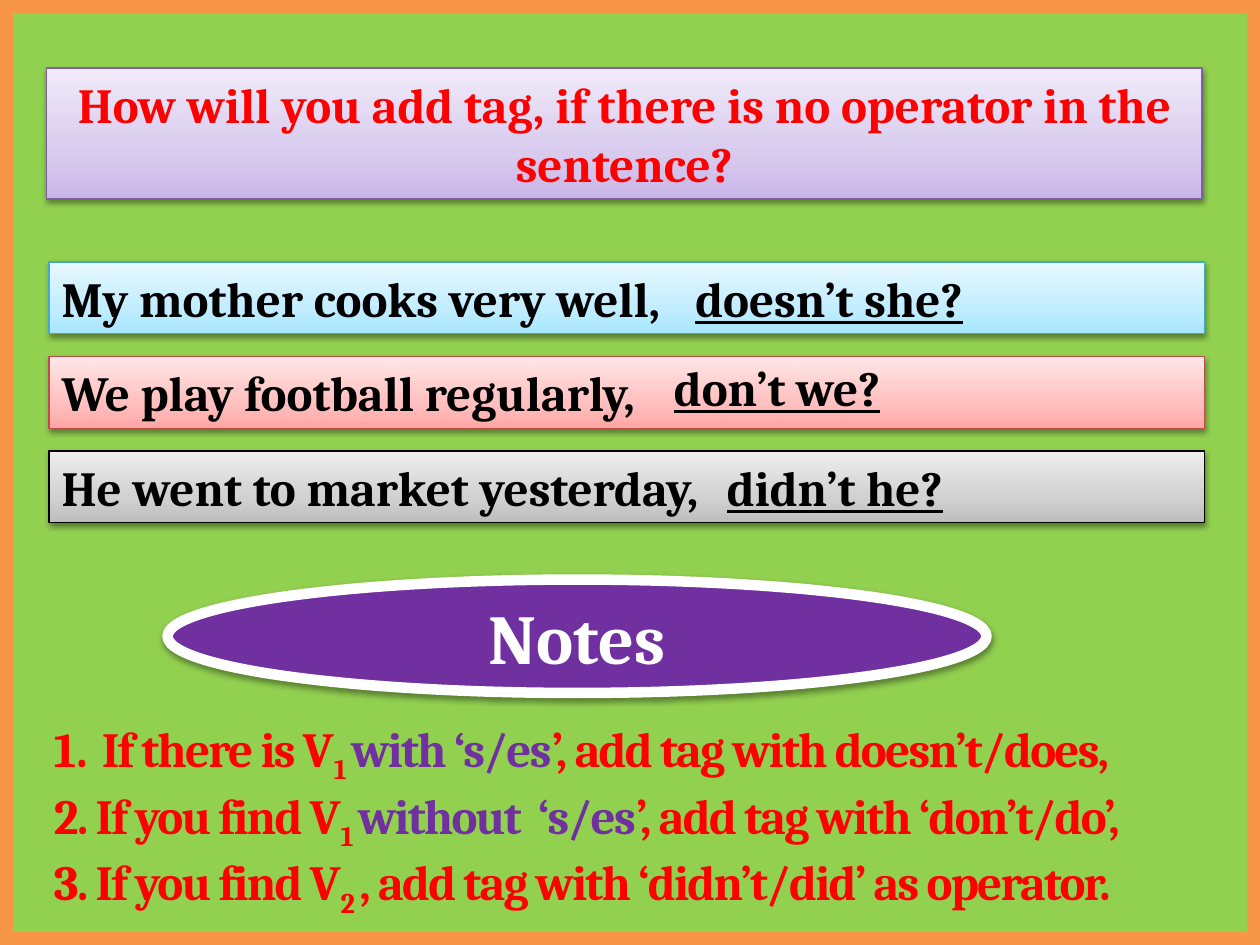
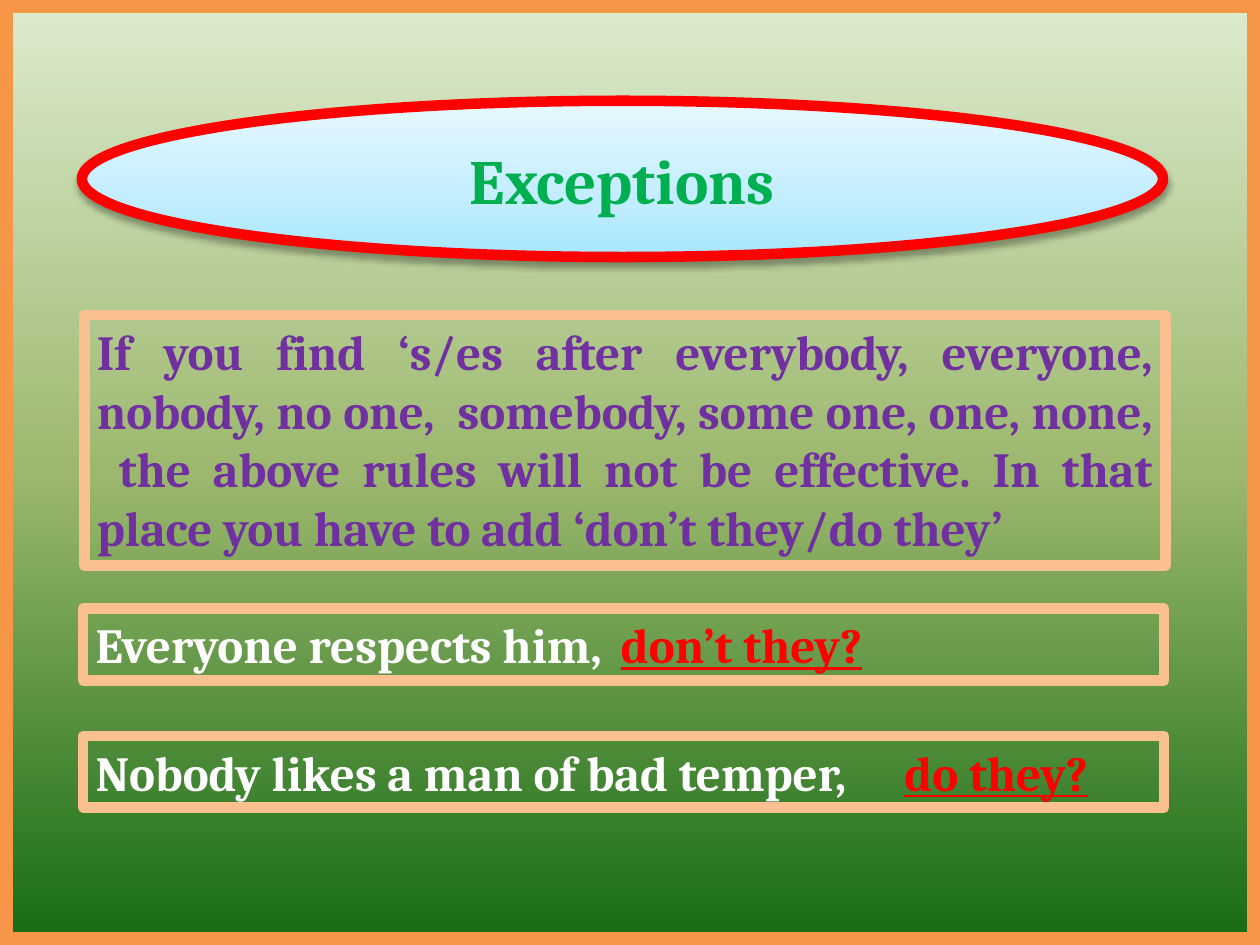
from lxml.etree import SubElement
from pptx import Presentation
from pptx.dml.color import RGBColor
from pptx.enum.shapes import MSO_SHAPE
from pptx.enum.text import MSO_ANCHOR, MSO_AUTO_SIZE, PP_ALIGN
from pptx.oxml.ns import qn
from pptx.util import Pt

PX = 9144  # 100 px to the inch
WIDTH, HEIGHT = 1000, 750
FONT = "Cambria"
BODY_SIZE = 28
rgb = RGBColor.from_string

ORANGE, PEACH = "F79646", "FAC090"
RED, PURPLE, GREEN = "FF0000", "7030A0", "00B050"
BLACK, WHITE = "000000", "FFFFFF"
LIME = "92D050"
LILAC_FADE = [(0, "C9B5E8"), (35, "D8CBEE"), (100, "F0EAF9")]
SKY_FADE = [(0, "A7E6FF"), (35, "C1EDFF"), (100, "E7F8FF")]
PINK_FADE = [(0, "FFA6A5"), (35, "FFC0BF"), (100, "FFE7E7")]
GREY_FADE = [(0, "BDBDBD"), (35, "D1D1D1"), (100, "EEEEEE")]
MEADOW_FADE = [(0, "DDEBCF"), (50, "9CB86E"), (100, "156B13")]
SOFT_SHADOW = (38, 3.1, 1.6)  # opacity %, blur pt, distance pt
DEEP_SHADOW = (32, 3.5, 2.2)


def paint_gradient(fill, element, stops, angle):
    """Give the first gradient found in element any number of colour stops."""
    fill.gradient()
    fill.gradient_angle = angle
    stop_list = element.xpath(".//a:gsLst")[0]
    for old_stop in list(stop_list):
        stop_list.remove(old_stop)
    for position, colour in stops:
        stop = SubElement(stop_list, qn("a:gs"), pos=str(position * 1000))
        SubElement(stop, qn("a:srgbClr"), val=colour)


def add_box(page, at, spans, kind=None, fill=None, line=None, shadow=None,
            size=BODY_SIZE, align=PP_ALIGN.LEFT, underline=False):
    """Add a shape, or a text box if kind is None; spans lists (text, colour) by paragraph."""
    place = [length * PX for length in at]
    if kind is None:
        box = page.shapes.add_textbox(*place)
    else:
        box = page.shapes.add_shape(kind, *place)
        box.shadow.inherit = False
        if fill is None:
            box.fill.background()
        elif isinstance(fill, list):
            paint_gradient(box.fill, box.element, fill, 90)
        else:
            box.fill.solid()
            box.fill.fore_color.rgb = rgb(fill)
        colour, width = line
        box.line.color.rgb = rgb(colour)
        box.line.width = Pt(width)
    if shadow:
        opacity, blur, distance = shadow
        effects = box.element.spPr.find(qn("a:effectLst"))
        outer = SubElement(effects, qn("a:outerShdw"), blurRad=str(Pt(blur)),
                           dist=str(Pt(distance)), dir="5400000", rotWithShape="0")
        tint = SubElement(outer, qn("a:srgbClr"), val=BLACK)
        SubElement(tint, qn("a:alpha"), val=str(opacity * 1000))

    frame = box.text_frame
    frame.word_wrap = True
    if kind == MSO_SHAPE.OVAL:
        frame.vertical_anchor = MSO_ANCHOR.MIDDLE
    else:
        frame.vertical_anchor = MSO_ANCHOR.TOP
        frame.auto_size = MSO_AUTO_SIZE.SHAPE_TO_FIT_TEXT
    for index, para_spans in enumerate(spans):
        para = frame.add_paragraph() if index else frame.paragraphs[0]
        para.alignment = align
        for text, colour in para_spans:
            span = para.add_run()
            span.text = text
            span.font.name = FONT
            span.font.size = Pt(size)
            span.font.bold = True
            span.font.underline = underline
            span.font.color.rgb = rgb(colour)
    return box


deck = Presentation()
deck.slide_width, deck.slide_height = WIDTH * PX, HEIGHT * PX
rules_page, exceptions_page = [deck.slides.add_slide(deck.slide_layouts[6]) for _ in range(2)]

rules_page.background.fill.solid()
rules_page.background.fill.fore_color.rgb = rgb(LIME)
paint_gradient(exceptions_page.background.fill, exceptions_page.element, MEADOW_FADE, 270)
for page in (rules_page, exceptions_page):
    add_box(page, (0, 0, WIDTH, HEIGHT), [], MSO_SHAPE.RECTANGLE, line=(ORANGE, 15))

# Rules: question, three examples with their tags, notes
question = "How will you add tag, if there is no operator in the sentence?"
add_box(rules_page, (37, 54, 917, 104), [[(question, RED)]], MSO_SHAPE.RECTANGLE,
        LILAC_FADE, ("7D60A0", 0.75), SOFT_SHADOW, align=PP_ALIGN.CENTER)

examples = [
    ("My mother cooks very well,", SKY_FADE, "46AAC5", "doesn’t she?", (542, 208, 250, 57)),
    ("We play football regularly,", PINK_FADE, "BF4C48", "don’t we?", (525, 279, 325, 57)),
    ("He went to market yesterday,", GREY_FADE, BLACK, "didn’t he?", (567, 358, 283, 57)),
]
for row, (sentence, fade, edge, tag, tag_at) in enumerate(examples):
    add_box(rules_page, (39, 208 + 75 * row, 917, 57), [[(sentence, BLACK)]],
            MSO_SHAPE.RECTANGLE, fade, (edge, 0.75), SOFT_SHADOW)
    add_box(rules_page, tag_at, [[(tag, BLACK)]], underline=True)

notes = [
    [("If there is V", RED), ("1 ", RED), ("with ‘s/es", PURPLE),
     ("’, add tag with doesn’t/does,", RED)],
    [("2. If you find V", RED), ("1 ", RED), ("without  ‘s/es", PURPLE),
     ("’, add tag with ‘don’t/do’,", RED)],
    [("3. If you find V", RED), ("2 ", RED),
     (", add tag with ‘didn’t/did’ as operator.", RED)],
]
notes_box = add_box(rules_page, (33, 565, 919, 151), notes)
for para in notes_box.text_frame.paragraphs:
    for span in para.runs:
        properties = span.font._element
        properties.set("spc", "-100")
        if span.text.strip().isdigit():
            properties.set("baseline", "-25000")
first_note = notes_box.text_frame.paragraphs[0]._p.get_or_add_pPr()
first_note.set("marL", str(38 * PX))
first_note.set("indent", str(-38 * PX))
SubElement(first_note, qn("a:buFont"), typeface="+mj-lt")
SubElement(first_note, qn("a:buAutoNum"), type="arabicPeriod")

add_box(rules_page, (133, 460, 650, 90), [[("Notes", WHITE)]], MSO_SHAPE.OVAL,
        PURPLE, (WHITE, 6), SOFT_SHADOW, size=40, align=PP_ALIGN.CENTER)

# Exceptions: heading, rule, two examples with their tags
add_box(exceptions_page, (65, 80, 858, 124), [[("Exceptions", GREEN)]], MSO_SHAPE.OVAL,
        SKY_FADE, (RED, 6), DEEP_SHADOW, size=36, align=PP_ALIGN.CENTER)

exception_rule = (
    "If you find ‘s/es after everybody, everyone, nobody, no one,  somebody, some one, "
    "one, none,  the above rules will not be effective. In that place you have to add "
    "‘don’t they/do they’"
)
add_box(exceptions_page, (67, 250, 858, 199), [[(exception_rule, PURPLE)]],
        MSO_SHAPE.RECTANGLE, line=(PEACH, 6), align=PP_ALIGN.JUSTIFY)

exception_examples = [
    ("Everyone respects him,", 483, "don’t they?", 483, 258),
    ("Nobody likes a man of bad temper,", 584, "do they?", 708, 198),
]
for sentence, top, tag, tag_left, tag_width in exception_examples:
    add_box(exceptions_page, (66, top, 858, 57), [[(sentence, WHITE)]],
            MSO_SHAPE.RECTANGLE, line=(PEACH, 6))
    add_box(exceptions_page, (tag_left, top, tag_width, 57), [[(tag, RED)]], underline=True)

deck.save("out.pptx")
